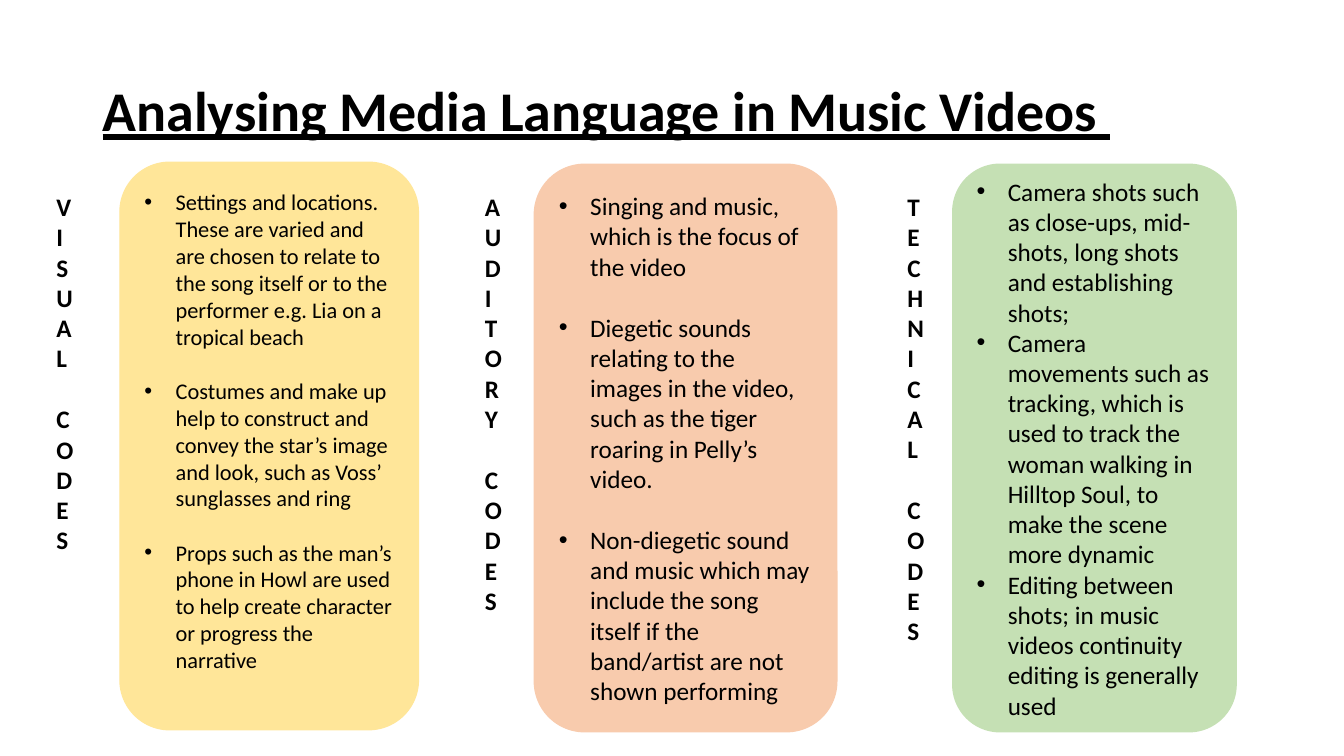
from lxml import etree
from pptx import Presentation
from pptx.dml.color import RGBColor
from pptx.enum import shapes, text
from pptx.oxml import ns
from pptx.util import Inches, Pt

COLORS = {"ink": "000000", "yellow": "FFE699", "peach": "F8CBAD", "green": "C5E0B4"}
FONT = "Calibri"
TITLE = "Analysing Media Language in Music Videos "
LINE = 1.22  # line height of the font, in ems
INDENT = 0.31
LABEL_TOP, LABEL_WIDTH = 1.85, 0.59
CARD_HEIGHT = 5.63

COLUMNS = [
    dict(
        label="VISUAL CODES", label_x=0.46, card=(1.19, 1.61, 2.96),
        fill="yellow", size=16, gap=16, foot=0.35,
        points=[
            "Settings and locations. These are varied and are chosen to relate to "
            "the song itself or to the performer e.g. Lia on a tropical beach",
            "Costumes and make up help to construct and convey the star’s image "
            "and look, such as Voss’ sunglasses and ring",
            "Props such as the man’s phone in Howl are used to help create "
            "character or progress the narrative",
        ],
    ),
    dict(
        label="AUDITORY CODES", label_x=4.71, card=(5.3, 1.63, 3),
        fill="peach", size=18, gap=18, foot=0.05,
        points=[
            "Singing and music, which is the focus of the video",
            "Diegetic sounds relating to the images in the video, such as the "
            "tiger roaring in Pelly’s video.",
            "Non-diegetic sound and music which may include the song itself if "
            "the band/artist are not shown performing",
        ],
    ),
    dict(
        label="TECHNICAL CODES", label_x=8.9, card=(9.45, 1.63, 2.81),
        fill="green", size=18, gap=0, foot=0.05,
        points=[
            "Camera shots such as close-ups, mid-shots, long shots and "
            "establishing shots;",
            "Camera movements such as tracking, which is used to track the woman "
            "walking in Hilltop Soul, to make the scene more dynamic",
            "Editing between shots; in music videos continuity editing is "
            "generally used",
        ],
    ),
]


def color(name):
    return RGBColor.from_string(COLORS[name])


def add_bullet(para):
    props = para._p.get_or_add_pPr()
    props.set("marL", str(Inches(INDENT)))
    props.set("indent", str(-Inches(INDENT)))
    etree.SubElement(props, ns.qn("a:buFont")).set("typeface", "Arial")
    etree.SubElement(props, ns.qn("a:buChar")).set("char", "•")


def write(frame, lines, size=18, bold=False, underline=False, bullet=False,
          gaps=None, spacing=None, anchor=text.MSO_ANCHOR.TOP):
    """Fill a frame; gaps maps a line's index to the points of space above it."""
    frame.word_wrap = True
    frame.vertical_anchor = anchor
    for i, line in enumerate(lines):
        para = frame.paragraphs[0] if i == 0 else frame.add_paragraph()
        para.alignment = text.PP_ALIGN.LEFT
        para.space_before = Pt((gaps or {}).get(i, 0))
        if spacing:
            para.line_spacing = spacing
        if bullet:
            add_bullet(para)
        run = para.add_run()
        run.text = line
        font = run.font
        font.name, font.size = FONT, Pt(size)
        font.bold, font.underline = bold, underline
        font.color.rgb = color("ink")


def add_card(slide, col):
    left, top, width = col["card"]
    card = slide.shapes.add_shape(
        shapes.MSO_SHAPE.ROUNDED_RECTANGLE,
        Inches(left), Inches(top), Inches(width), Inches(CARD_HEIGHT))
    card.shadow.inherit = False
    card.fill.solid()
    card.fill.fore_color.rgb = color(col["fill"])
    card.line.color.rgb = color(col["fill"])
    card.line.width = Pt(1)
    card.text_frame.margin_bottom = Inches(col["foot"])
    gap = round(col["gap"] * LINE, 1)
    write(card.text_frame, col["points"], size=col["size"], bullet=True,
          gaps={1: gap, 2: gap}, anchor=text.MSO_ANCHOR.MIDDLE)


def add_label(slide, col):
    """Stack the letters of the label, with one line of space between words."""
    first, second = col["label"].split()
    height = (len(col["label"]) * 18 * LINE) / 72 + 0.1
    box = slide.shapes.add_textbox(
        Inches(col["label_x"]), Inches(LABEL_TOP),
        Inches(LABEL_WIDTH), Inches(round(height, 2)))
    write(box.text_frame, first + second, bold=True,
          gaps={len(first): round(18 * LINE, 1)})
    box.text_frame.auto_size = text.MSO_AUTO_SIZE.SHAPE_TO_FIT_TEXT


def main():
    deck = Presentation()
    deck.slide_width, deck.slide_height = Inches(13.33), Inches(7.5)
    slide = deck.slides.add_slide(deck.slide_layouts[6])
    for col in COLUMNS:
        add_card(slide, col)
    title = slide.shapes.add_textbox(
        Inches(0.92), Inches(0.4), Inches(11.5), Inches(1.45))
    write(title.text_frame, [TITLE], size=40, bold=True, underline=True,
          spacing=0.9, anchor=text.MSO_ANCHOR.MIDDLE)
    for col in COLUMNS:
        add_label(slide, col)
    deck.save("out.pptx")


if __name__ == "__main__":
    main()
